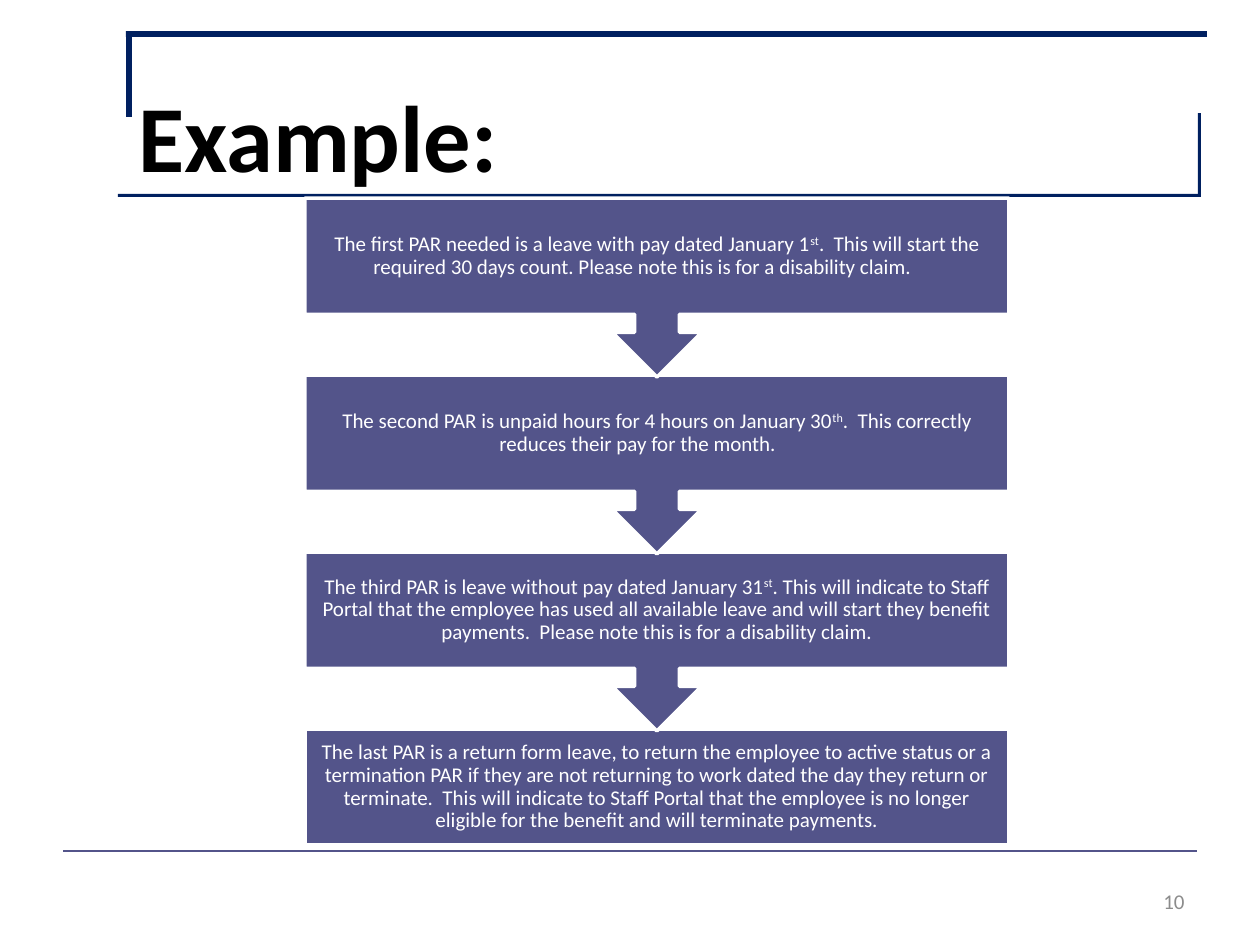
from pptx import Presentation, util as u
from pptx.dml.color import RGBColor
from pptx.enum import shapes, text
from pptx.oxml.ns import qn
from lxml import etree

PX = 914400 / 126
HEX = {"navy": "002060", "box": "53548A", "white": "FFFFFF",
       "black": "000000", "grey": "8C8C8C"}

# left, top, width, height of the bars that frame the title
BARS = [(118, 194, 1081, 3), (126, 31, 1081, 6),
        (126, 33, 6, 84), (1198, 113, 3, 84)]

# text before, superscript, text after
STEPS = [
    ("The first PAR needed is a leave with pay dated January 1", "st",
     ".  This will start the required 30 days count. "
     "Please note this is for a disability claim.\t"),
    ("The second PAR is unpaid hours for 4 hours on January 30", "th",
     ".  This correctly reduces their pay for the month.\t"),
    ("The third PAR is leave without pay dated January 31", "st",
     ". This will indicate to Staff Portal that the employee has used all "
     "available leave and will start they benefit payments.  "
     "Please note this is for a disability claim."),
    ("The last PAR is a return form leave, to return the employee to active "
     "status or a termination PAR if they are not returning to work dated "
     "the day they return or terminate.  This will indicate to Staff Portal "
     "that the employee is no longer eligible for the benefit and will "
     "terminate payments.", "", ""),
]
LEFT, TOP, WIDTH, PITCH = 305, 198, 704, 177
BOX_H, CALL_H = 116, 179


def emu(*vals):
    return [u.Emu(round(v * PX)) for v in vals]


def color(name):
    return RGBColor.from_string(HEX[name])


def style(obj, **vals):
    for key, val in vals.items():
        setattr(obj, key, val)


def write(frame, parts, size, tone, align, anchor, bold=False):
    """Fill the frame with one paragraph; every second part is superscript."""
    style(frame, word_wrap=True, auto_size=text.MSO_AUTO_SIZE.NONE,
          vertical_anchor=anchor)
    para = frame.paragraphs[0]
    para.alignment = align
    for i, part in enumerate(parts):
        if not part:
            continue
        run = para.add_run()
        run.text = part
        style(run.font, name="Calibri", size=u.Pt(size), bold=bold)
        run.font.color.rgb = color(tone)
        if i % 2:
            run.font._element.set("baseline", "30000")
    return para


def add_block(slide, kind, box, fill, edge=None):
    shape = slide.shapes.add_shape(kind, *emu(*box))
    shape.shadow.inherit = False
    shape.fill.solid()
    shape.fill.fore_color.rgb = color(fill)
    if edge:
        shape.line.color.rgb = color(edge)
        shape.line.width = u.Pt(2)
    else:
        shape.line.fill.background()
    return shape


def add_rule(slide, ends):
    line = slide.shapes.add_connector(shapes.MSO_CONNECTOR.STRAIGHT, *emu(*ends))
    line.line.color.rgb = color("box")
    line.line.width = u.Pt(1.5)
    etree.SubElement(line._element.spPr, qn("a:effectLst"))


def add_title(slide, words):
    title = slide.shapes.title
    spot = emu(126, 38, 829, 160)
    style(title, **dict(zip(("left", "top", "width", "height"), spot)))
    write(title.text_frame, [words], 54, "black", text.PP_ALIGN.LEFT,
          text.MSO_ANCHOR.BOTTOM, bold=True)


def add_step(slide, top, parts, last):
    if last:
        add_block(slide, shapes.MSO_SHAPE.RECTANGLE,
                  (LEFT, top, WIDTH, BOX_H), "box", "white")
    else:
        arrow = add_block(slide, shapes.MSO_SHAPE.UP_ARROW_CALLOUT,
                          (LEFT, top, WIDTH, CALL_H), "box", "white")
        arrow.rotation = 180
    # A label of its own stays upright over the turned callout
    label = slide.shapes.add_textbox(*emu(LEFT, top, WIDTH, BOX_H))
    frame = label.text_frame
    pad = u.Inches(0.09)
    style(frame, margin_left=pad, margin_right=pad,
          margin_top=pad, margin_bottom=pad)
    para = write(frame, parts, 12, "white", text.PP_ALIGN.CENTER,
                 text.MSO_ANCHOR.MIDDLE)
    para.line_spacing = 0.9


def add_number(slide, num):
    box = slide.shapes.add_textbox(*emu(903, 876, 294, 50))
    write(box.text_frame, [num], 12, "grey", text.PP_ALIGN.RIGHT,
          text.MSO_ANCHOR.MIDDLE)


def main():
    prs = Presentation()
    style(prs, slide_width=u.Inches(10), slide_height=u.Inches(7.5))
    slide = prs.slides.add_slide(prs.slide_layouts[5])
    add_rule(slide, (63, 851, 1197, 851))
    for bar in BARS:
        add_block(slide, shapes.MSO_SHAPE.RECTANGLE, bar, "navy")
    add_title(slide, "Example:")
    add_number(slide, "10")
    # Last step first, so that each arrow tip lies over the box below it
    for i in reversed(range(len(STEPS))):
        add_step(slide, TOP + i * PITCH, STEPS[i], i == len(STEPS) - 1)
    prs.save("out.pptx")


if __name__ == "__main__":
    main()
